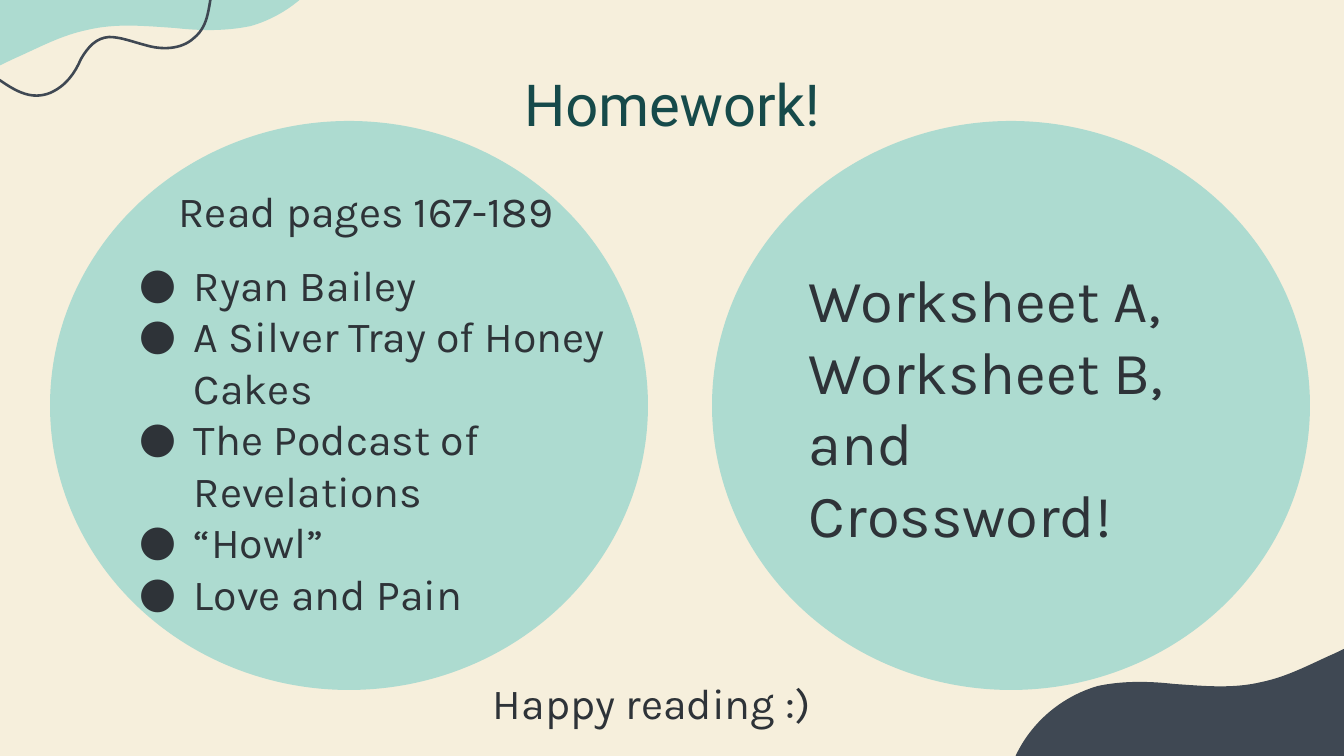
from pptx import Presentation
from pptx.dml.color import RGBColor
from pptx.enum.shapes import MSO_SHAPE as Shape
from pptx.enum.text import MSO_ANCHOR as Anchor, PP_ALIGN as Align
from pptx.oxml.ns import qn
from pptx.util import Pt
from lxml.etree import SubElement

EMU_PER_PX = 914400 / 134.4
COLORS = {"cream": "F6EFDC", "mint": "ADDBD0", "slate": "3F4853",
          "teal": "164A4A", "ink": "2E3338"}

# Curves: a start point, then (control, control, end) for each Bezier segment
WAVE = [(-187, -50),
        (-188, -28), (-185, -8), (-177, 11),
        (-165, 39), (-138, 60), (-110, 70),
        (-106, 71), (-103, 73), (-99, 73),
        (-66, 81), (-31, 77), (1, 65),
        (7, 62), (13, 59), (20, 56),
        (42, 46), (63, 35), (87, 30),
        (116, 23), (145, 26), (175, 28),
        (202, 31), (227, 31), (251, 26),
        (289, 15), (321, -13), (336, -50)]
SQUIGGLE = [(259, -71),
            (235, -58), (220, -40), (213, -12),
            (208, 5), (210, 25), (194, 38),
            (181, 50), (161, 50), (145, 45),
            (133, 42), (121, 37), (109, 37),
            (96, 38), (88, 47), (81, 59),
            (75, 73), (66, 86), (50, 93),
            (32, 100), (17, 92), (1, 81),
            (-17, 69), (-42, 62), (-65, 71),
            (-87, 79), (-103, 95), (-111, 117)]
READINGS = ["Ryan Bailey", "A Silver Tray of Honey Cakes",
            "The Podcast of Revelations", "“Howl”", "Love and Pain"]


def px(n):
    return round(n * EMU_PER_PX)


def rgb(name):
    return RGBColor.from_string(COLORS[name])


def fill_shape(s, color):
    s.shadow.inherit = False
    s.fill.solid()
    s.fill.fore_color.rgb = rgb(color)
    s.line.fill.background()


def add_curve(slide, curve, close):
    """Build a freeform through the end points, then bend its segments."""
    ends = curve[::3]
    builder = slide.shapes.build_freeform(*ends[0], scale=EMU_PER_PX)
    builder.add_line_segments(ends[1:], close=close)
    s = builder.convert_to_shape()
    left = min(x for x, y in ends)
    top = min(y for x, y in ends)
    segments = list(s._element.iter(qn("a:lnTo")))
    for i, segment in enumerate(segments[:len(ends) - 1]):
        bend = segment.makeelement(qn("a:cubicBezTo"))
        for x, y in curve[3 * i + 1:3 * i + 4]:
            pt = SubElement(bend, qn("a:pt"))
            pt.set("x", str(x - left))
            pt.set("y", str(y - top))
        segment.getparent().replace(segment, bend)
    return s


def add_wave(slide, curve, color):
    fill_shape(add_curve(slide, curve, True), color)


def add_squiggle(slide, curve, color):
    s = add_curve(slide, curve, False)
    s.shadow.inherit = False
    s.fill.background()
    s.line.color.rgb = rgb(color)
    s.line.width = Pt(1.4)


def add_circle(slide, left):
    s = slide.shapes.add_shape(Shape.OVAL, px(left), px(121), px(598), px(569))
    fill_shape(s, "mint")


def add_text(slide, box, lines, size, font="Karla", color="ink",
             anchor=Anchor.TOP, align=Align.LEFT):
    tf = slide.shapes.add_textbox(*map(px, box)).text_frame
    tf.word_wrap = True
    tf.vertical_anchor = anchor
    tf.margin_left = tf.margin_right = tf.margin_top = tf.margin_bottom = 0
    tf.text = "\n".join(lines)
    for p in tf.paragraphs:
        p.alignment = align
        for r in p.runs:
            r.font.size = Pt(size)
            r.font.name = font
            r.font.color.rgb = rgb(color)
    return tf


def add_bullet(p):
    pPr = p._p.get_or_add_pPr()
    pPr.set("marL", str(px(67)))
    pPr.set("indent", str(px(-55)))
    bu_color = SubElement(pPr, qn("a:buClr"))
    SubElement(bu_color, qn("a:srgbClr")).set("val", COLORS["ink"])
    SubElement(pPr, qn("a:buFont")).set("typeface", "Karla")
    SubElement(pPr, qn("a:buChar")).set("char", "●")


def main():
    prs = Presentation()
    prs.slide_width, prs.slide_height = px(1344), px(756)
    slide = prs.slides.add_slide(prs.slide_layouts[6])
    slide.background.fill.solid()
    slide.background.fill.fore_color.rgb = rgb("cream")

    # Corner decorations: the lower wave is the upper one turned by 180 degrees
    add_wave(slide, WAVE, "mint")
    add_wave(slide, [(1349 - x, 712 - y) for x, y in WAVE], "slate")
    add_squiggle(slide, SQUIGGLE, "slate")

    # Right circle, title, left circle
    add_circle(slide, 712)
    add_text(slide, (105, 69, 1134, 67), ["Homework!"], 31, "Roboto", "teal",
             align=Align.CENTER)
    add_circle(slide, 50)

    # Reading list
    tf = add_text(slide, (127, 204, 489, 395),
                  ["Read pages 167-189 "] + READINGS, 23, anchor=Anchor.MIDDLE)
    heading, *items = tf.paragraphs
    heading.alignment = Align.CENTER
    items[0].space_before = Pt(12)
    for p in items:
        add_bullet(p)

    # Worksheets and closing line
    tf = add_text(slide, (809, 213, 406, 386),
                  ["Worksheet A, Worksheet B, and Crossword!"], 32,
                  anchor=Anchor.MIDDLE)
    tf.paragraphs[0].space_after = Pt(12)
    add_text(slide, (493, 677, 359, 51), ["Happy reading :)"], 23)

    prs.save("out.pptx")


if __name__ == "__main__":
    main()
